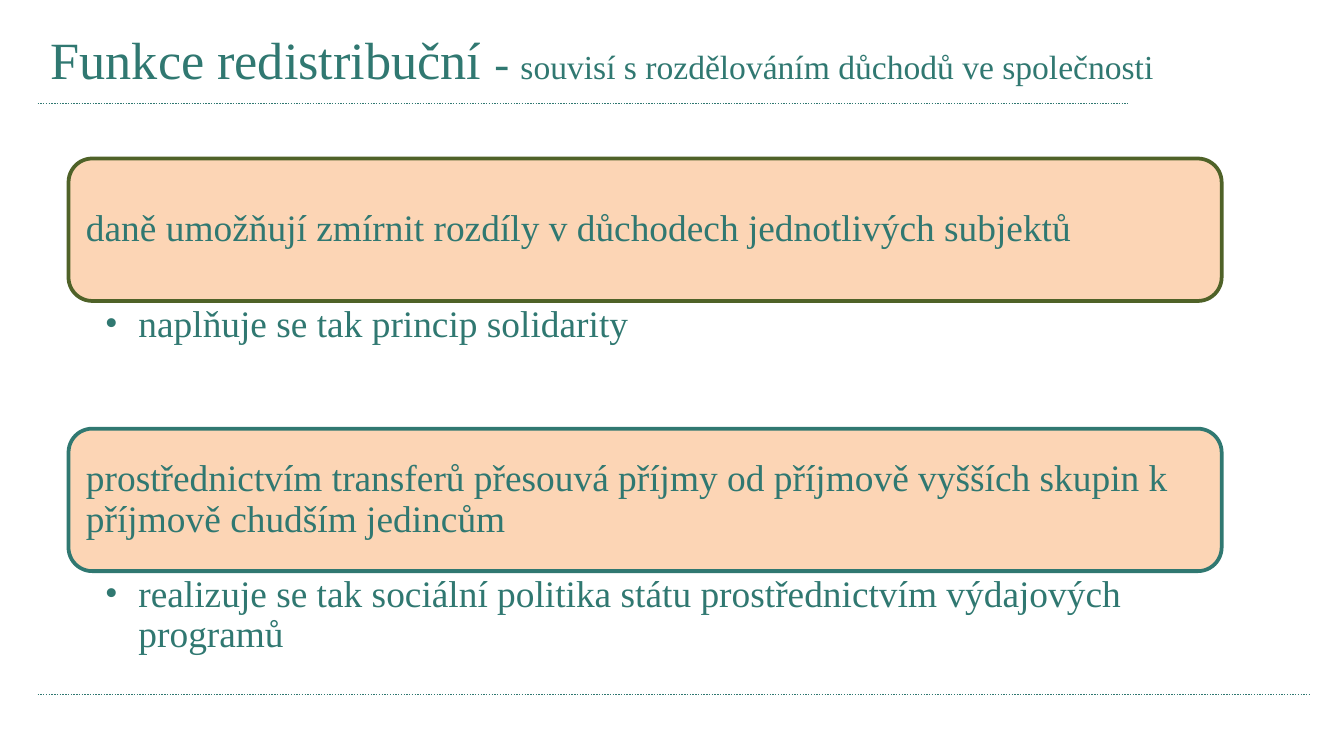
from lxml import etree
from pptx import Presentation
from pptx.dml.color import RGBColor
from pptx.enum.dml import MSO_LINE
from pptx.enum.shapes import MSO_CONNECTOR, MSO_SHAPE
from pptx.enum.text import MSO_ANCHOR
from pptx.oxml.ns import qn
from pptx.util import Inches, Pt

STRAIGHT = MSO_CONNECTOR.STRAIGHT
ROUNDED = MSO_SHAPE.ROUNDED_RECTANGLE
DOTTED = MSO_LINE.ROUND_DOT
TOP, MIDDLE = MSO_ANCHOR.TOP, MSO_ANCHOR.MIDDLE

# Content
TITLE = [
    ("Funkce redistribuční ", "title"),
    ("- ", "dash"),
    ("souvisí s\u00a0rozdělováním důchodů ve společnosti", "subtitle"),
]
SECTIONS = [
    {
        "statement": "daně umožňují zmírnit rozdíly v\u00a0důchodech jednotlivých subjektů",
        "detail": "naplňuje se tak princip solidarity",
        "border": "olive",
    },
    {
        "statement": "prostřednictvím transferů přesouvá příjmy od příjmově vyšších skupin k "
                     "příjmově chudším jedincům",
        "detail": "realizuje se tak sociální politika státu prostřednictvím výdajových programů",
        "border": "teal",
    },
]
RULES = [(0.77, 8.39), (5.17, 9.75)]  # height on the slide, right end

THEME = {
    "font": "Times New Roman",
    "colors": {
        "teal": RGBColor.from_string("307871"),
        "olive": RGBColor.from_string("4F6228"),
        "peach": RGBColor.from_string("FCD5B5"),
    },
    "sizes": {"title": Pt(28), "dash": Pt(24), "subtitle": Pt(18), "body": Pt(20)},
}
COLORS = THEME["colors"]

# Layout in inches
SLIDE_WIDTH = 10
MARGIN = 0.28
SECTION_LEFT, SECTION_TOP, SECTION_WIDTH = 0.51, 1.18, 8.58
SECTION_PITCH = 2.01
CARD_HEIGHT, DETAIL_HEIGHT = 1.06, 0.94
CARD_INSET = 0.05


def add_text(slide, box, runs, insets, anchor=TOP, space_after=0, bullet=False):
    """Add a wrapped one-paragraph text box; runs are (text, size name)."""
    frame = slide.shapes.add_textbox(*map(Inches, box)).text_frame
    left, top, right, bottom = map(Inches, insets)
    frame_format = {
        "word_wrap": True, "vertical_anchor": anchor,
        "margin_left": left, "margin_top": top,
        "margin_right": right, "margin_bottom": bottom,
    }
    for key, value in frame_format.items():
        setattr(frame, key, value)

    paragraph = frame.paragraphs[0]
    paragraph.line_spacing = 0.9
    paragraph.space_after = Pt(space_after)
    if bullet:
        paragraph.level = 1
        properties = paragraph._p.get_or_add_pPr()
        properties.set("marL", str(Inches(0.25)))
        properties.set("indent", str(-Inches(0.25)))
        etree.SubElement(properties, qn("a:buFont"), typeface=THEME["font"])
        etree.SubElement(properties, qn("a:buChar"), char="•")

    for text, size in runs:
        run = paragraph.add_run()
        run.text = text
        for key, value in {"name": THEME["font"], "size": THEME["sizes"][size]}.items():
            setattr(run.font, key, value)
        run.font.color.rgb = COLORS["teal"]


def add_rule(slide, y, right):
    rule = slide.shapes.add_connector(
        STRAIGHT, Inches(MARGIN), Inches(y), Inches(right), Inches(y))
    rule.line.color.rgb = COLORS["teal"]
    rule.line.width = Pt(0.75)
    rule.line.dash_style = DOTTED
    etree.SubElement(rule._element.spPr, qn("a:effectLst"))


def add_section(slide, top, section):
    # Card with its statement
    card = slide.shapes.add_shape(
        ROUNDED, *map(Inches, (SECTION_LEFT, top, SECTION_WIDTH, CARD_HEIGHT)))
    card.shadow.inherit = False
    card.fill.solid()
    card.fill.fore_color.rgb = COLORS["peach"]
    card.line.color.rgb = COLORS[section["border"]]
    card.line.width = Pt(2)
    statement_box = (SECTION_LEFT + CARD_INSET, top + CARD_INSET,
                     SECTION_WIDTH - 2 * CARD_INSET, CARD_HEIGHT - 2 * CARD_INSET)
    add_text(slide, statement_box, [(section["statement"], "body")],
             [0.08] * 4, anchor=MIDDLE, space_after=7)

    # Detail under the card
    detail_box = (SECTION_LEFT, top + CARD_HEIGHT, SECTION_WIDTH, DETAIL_HEIGHT)
    add_text(slide, detail_box, [(section["detail"], "body")],
             (0.27, 0.03, 0.16, 0.03), space_after=4, bullet=True)


def main():
    presentation = Presentation()
    presentation.slide_width = Inches(SLIDE_WIDTH)
    presentation.slide_height = Inches(SLIDE_WIDTH * 9 / 16)
    slide = presentation.slides.add_slide(presentation.slide_layouts[6])

    # Rules and title
    for y, right in RULES:
        add_rule(slide, y, right)
    add_text(slide, (MARGIN, 0.21, 8.9, 0.56), TITLE, (0.1, 0.05, 0.1, 0.05))

    # Stacked sections
    for index, section in enumerate(SECTIONS):
        add_section(slide, SECTION_TOP + index * SECTION_PITCH, section)

    presentation.save("out.pptx")


if __name__ == "__main__":
    main()
